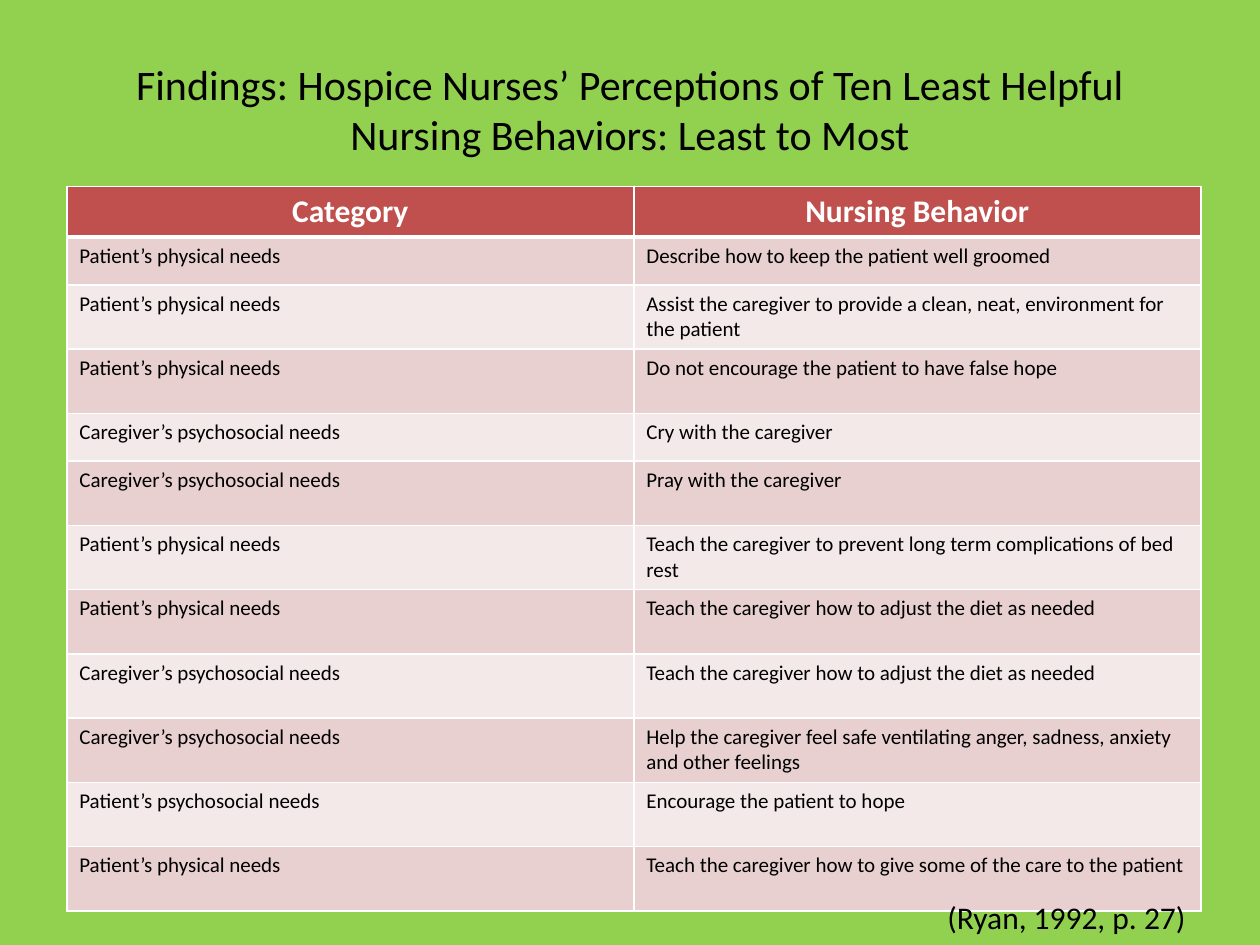
from lxml import etree
from pptx import Presentation
from pptx.dml.color import RGBColor
from pptx.enum.text import MSO_ANCHOR, PP_ALIGN
from pptx.oxml.ns import qn
from pptx.util import Inches, Pt

LEFT, CENTER = PP_ALIGN.LEFT, PP_ALIGN.CENTER
TOP, MIDDLE = MSO_ANCHOR.TOP, MSO_ANCHOR.MIDDLE
BLANK_LAYOUT = 6

COLORS = {
    "background": "92D050",
    "text": "000000",
    "white": "FFFFFF",
    "header": "C0504D",
    "odd_row": "E8D0D0",
    "even_row": "F4E9E9",
}

PATIENT_PHYSICAL = "Patient’s physical needs"
PATIENT_PSYCHOSOCIAL = "Patient’s psychosocial needs"
CAREGIVER_PSYCHOSOCIAL = "Caregiver’s psychosocial needs"
ADJUST_DIET = "Teach the caregiver how to adjust the diet as needed"

HEADINGS = ("Category", "Nursing Behavior")
HEADER_HEIGHT, SHORT, TALL = 0.4, 0.38, 0.51
FINDINGS = [
    (PATIENT_PHYSICAL, "Describe how to keep the patient well groomed", SHORT),
    (PATIENT_PHYSICAL, "Assist the caregiver to provide a clean, neat, environment for the patient", TALL),
    (PATIENT_PHYSICAL, "Do not encourage the patient to have false hope", TALL),
    (CAREGIVER_PSYCHOSOCIAL, "Cry with the caregiver", SHORT),
    (CAREGIVER_PSYCHOSOCIAL, "Pray with the caregiver", TALL),
    (PATIENT_PHYSICAL, "Teach the caregiver to prevent long term complications of bed rest", TALL),
    (PATIENT_PHYSICAL, ADJUST_DIET, TALL),
    (CAREGIVER_PSYCHOSOCIAL, ADJUST_DIET, TALL),
    (CAREGIVER_PSYCHOSOCIAL, "Help the caregiver feel safe ventilating anger, sadness, anxiety and other feelings", TALL),
    (PATIENT_PSYCHOSOCIAL, "Encourage the patient to hope", TALL),
    (PATIENT_PHYSICAL, "Teach the caregiver how to give some of the care to the patient", TALL),
]


class SlideBuilder:
    """Holds the text style and the page being filled."""

    font_name = "Calibri"

    def __init__(self, page):
        self.page = page

    def background(self, color):
        fill = self.page.background.fill
        fill.solid()
        fill.fore_color.rgb = RGBColor.from_string(COLORS[color])

    def add_words(self, frame, text, size, color="text", bold=False, align=LEFT):
        para = frame.paragraphs[0]
        para.alignment = align
        span = para.add_run()
        span.text = text
        style = {"name": self.font_name, "size": Pt(size), "bold": bold}
        for name, value in style.items():
            setattr(span.font, name, value)
        span.font.color.rgb = RGBColor.from_string(COLORS[color])

    def text(self, place, text, size, align=LEFT, anchor=TOP, wrap=True):
        box = self.page.shapes.add_textbox(*map(Inches, place))
        frame = box.text_frame
        frame.word_wrap = wrap
        frame.vertical_anchor = anchor
        self.add_words(frame, text, size, align=align)

    def borders(self, cell, widths):
        """Draw white edges; widths maps L, R, T and B to points."""
        properties = cell._tc.get_or_add_tcPr()
        for index, (side, width) in enumerate(widths.items()):
            line = etree.Element(qn(f"a:ln{side}"), w=str(Pt(width)))
            solid = etree.SubElement(line, qn("a:solidFill"))
            etree.SubElement(solid, qn("a:srgbClr"), val=COLORS["white"])
            properties.insert(index, line)

    def cell(self, cell, text, fill, edges, **style):
        cell.fill.solid()
        cell.fill.fore_color.rgb = RGBColor.from_string(COLORS[fill])
        self.add_words(cell.text_frame, text, **style)
        self.borders(cell, edges)

    def table(self, left, top, width, headings, findings):
        heights = [HEADER_HEIGHT] + [height for *_, height in findings]
        rows = [headings] + [texts for *texts, _ in findings]
        place = map(Inches, (left, top, width, sum(heights)))
        table = self.page.shapes.add_table(len(rows), len(headings), *place).table
        header_style = {"size": 18, "color": "white", "bold": True, "align": CENTER}
        for number, (texts, height) in enumerate(zip(rows, heights)):
            table.rows[number].height = Inches(height)
            fill = "odd_row" if number % 2 else "even_row"
            style = {"size": 12}
            if number == 0:
                fill, style = "header", header_style
            edges = {"L": 1, "R": 1, "T": 3 if number == 1 else 1, "B": 1 if number else 3}
            for column, text in enumerate(texts):
                self.cell(table.cell(number, column), text, fill, edges, **style)


def main():
    deck = Presentation()
    deck.slide_width, deck.slide_height = Inches(10), Inches(7.5)
    builder = SlideBuilder(deck.slides.add_slide(deck.slide_layouts[BLANK_LAYOUT]))
    builder.background("background")
    builder.text(
        (0.5, 0.3, 9, 1.12),
        "Findings: Hospice Nurses’ Perceptions of Ten Least Helpful Nursing Behaviors: Least to Most",
        24, align=CENTER, anchor=MIDDLE,
    )
    builder.table(0.53, 1.48, 9, HEADINGS, FINDINGS)
    builder.text((7.42, 7.08, 2.12, 0.4), "(Ryan, 1992, p. 27)", 18, wrap=False)
    deck.save("out.pptx")


if __name__ == "__main__":
    main()
